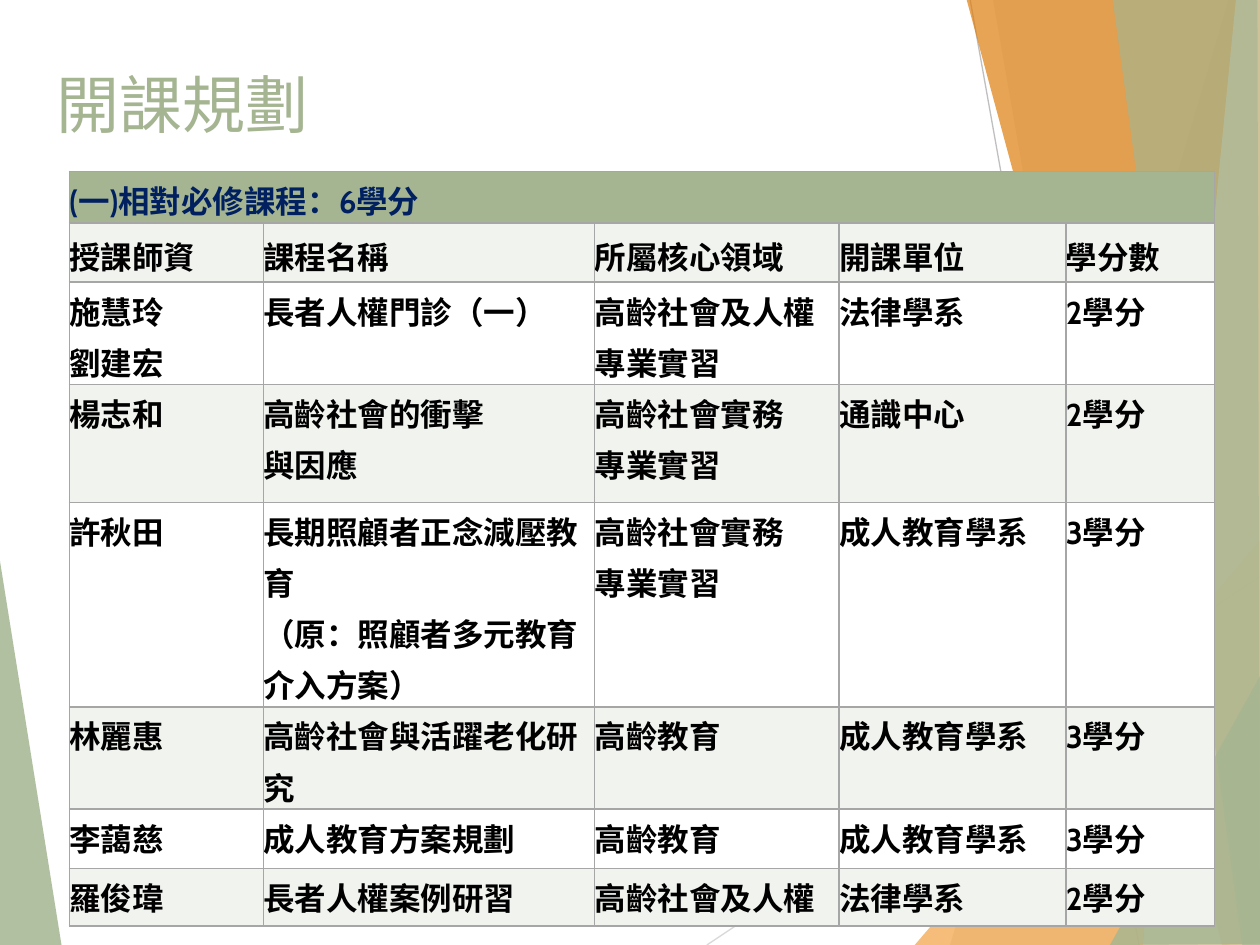
from lxml import etree
from pptx import Presentation
from pptx.dml.color import RGBColor
from pptx.enum import shapes, text
from pptx.oxml import ns
from pptx.util import Inches, Pt

FONT = "Cabin"
SAGE, PALE, WHITE = "A5B592", "F0F3EE", "FFFFFF"

TITLE = "開課規劃"
HEADING = "(一)相對必修課程：6學分"
COLUMNS = ["授課師資", "課程名稱", "所屬核心領域", "開課單位", "學分數"]
COURSES = [
    ("施慧玲\n劉建宏", "長者人權門診（一）", "高齡社會及人權\n專業實習", "法律學系", "2學分"),
    ("楊志和", "高齡社會的衝擊\n與因應", "高齡社會實務\n專業實習", "通識中心", "2學分"),
    ("許秋田", "長期照顧者正念減壓教育\n（原：照顧者多元教育\n介入方案）",
     "高齡社會實務\n專業實習", "成人教育學系", "3學分"),
    ("林麗惠", "高齡社會與活躍老化研究", "高齡教育", "成人教育學系", "3學分"),
    ("李藹慈", "成人教育方案規劃", "高齡教育", "成人教育學系", "3學分"),
    ("羅俊瑋", "長者人權案例研習", "高齡社會及人權", "法律學系", "2學分"),
]
COLUMN_WIDTHS = [1.54, 2.63, 1.94, 1.8, 1.18]
ROW_HEIGHTS = [0.41, 0.47, 0.81, 0.94, 1.28, 0.63, 0.47, 0.46]

LEFT_FACET = ([(-0.01, 4.39), (0.49, 7.51), (-0.01, 7.5)], SAGE, 85)
RAYS = [((5.61, 7.5), (10.01, 4.57), "D9D9D9"), ((7.7, 0), (9.04, 7.5), "BFBFBF")]
RIGHT_FACETS = [
    ([(9.75, 0), (7.54, 7.5), (10.02, 7.51), (10.01, 0.01)], SAGE, 30),
    ([(7.88, -0.01), (9.19, 7.5), (10.01, 7.5), (10.01, -0.01)], SAGE, 20),
    ([(7.26, 7.5), (10, 4.29), (10.01, 7.5)], "F3A447", 72),
    ([(7.67, -0.01), (9.7, 7.5), (10.01, 7.49), (10.01, -0.01)], "DD7E0E", 70),
    ([(9.81, -0.01), (9.07, 7.5), (10.01, 7.5), (10, -0.01)], "C9D3BE", 70),
    ([(8.83, -0.01), (9.86, 7.5), (10, 7.5), (9.98, -0.01)], SAGE, 65),
    ([(8.81, 7.5), (10.01, 5.35), (10.01, 7.49)], SAGE, 80),
]


def paint(fill, color):
    fill.solid()
    fill.fore_color.rgb = RGBColor.from_string(color)


def add_facet(slide, points, color, opacity):
    corners = [(Inches(x), Inches(y)) for x, y in points]
    builder = slide.shapes.build_freeform(*corners[0])
    builder.add_line_segments(corners[1:], close=True)
    facet = builder.convert_to_shape()
    facet.shadow.inherit = False
    facet.line.fill.background()
    paint(facet.fill, color)
    tint = facet.fill._xPr.find(".//" + ns.qn("a:srgbClr"))
    etree.SubElement(tint, ns.qn("a:alpha"), val=str(opacity * 1000))


def add_ray(slide, start, end, color):
    ray = slide.shapes.add_connector(
        shapes.MSO_CONNECTOR.STRAIGHT, *map(Inches, start + end))
    ray.line.width = Pt(0.75)
    paint(ray.line.fill, color)
    etree.SubElement(ray._element.spPr, ns.qn("a:effectLst"))


def write(paragraph, words, size, color, bold):
    run = paragraph.add_run()
    run.text = words
    run.font.name = FONT
    run.font.size = Pt(size)
    run.font.bold = bold
    paint(run.font.fill, color)


def add_borders(cell):
    properties = cell._tc.get_or_add_tcPr()
    for position, side in enumerate(("a:lnL", "a:lnR", "a:lnT", "a:lnB")):
        border = etree.Element(ns.qn(side), w=str(Pt(1)))
        solid = etree.SubElement(border, ns.qn("a:solidFill"))
        etree.SubElement(solid, ns.qn("a:srgbClr"), val="A6A6A6")
        properties.insert(position, border)


def fill_cell(cell, words, background, color, anchor):
    cell.margin_left = cell.margin_right = cell.margin_top = cell.margin_bottom = 0
    cell.vertical_anchor = anchor
    paint(cell.fill, background)
    add_borders(cell)
    frame = cell.text_frame
    for number, line in enumerate(words.split("\n") if words else []):
        paragraph = frame.add_paragraph() if number else frame.paragraphs[0]
        paragraph.line_spacing = 1.12
        write(paragraph, line, 18, color, True)


def add_title(slide):
    title = slide.shapes.title
    title.left, title.top, title.width, title.height = map(Inches, (0.35, 0.36, 9.5, 0.92))
    frame = title.text_frame
    frame.vertical_anchor = text.MSO_ANCHOR.MIDDLE
    frame.paragraphs[0].alignment = text.PP_ALIGN.LEFT
    write(frame.paragraphs[0], TITLE, 36, SAGE, False)
    slide.shapes._spTree.append(title._element)


def add_courses(slide):
    rows = [(HEADING, "", "", "", ""), COLUMNS] + COURSES
    table = slide.shapes.add_table(
        len(rows), len(COLUMNS), Inches(0.55), Inches(1.36),
        Inches(sum(COLUMN_WIDTHS)), Inches(sum(ROW_HEIGHTS))).table
    for column, width in zip(table.columns, COLUMN_WIDTHS):
        column.width = Inches(width)
    for r, (entries, height) in enumerate(zip(rows, ROW_HEIGHTS)):
        table.rows[r].height = Inches(height)
        background = SAGE if r == 0 else PALE if r % 2 else WHITE
        color = "002060" if r == 0 else "000000"
        anchor = text.MSO_ANCHOR.MIDDLE if r < 2 else text.MSO_ANCHOR.TOP
        for c, words in enumerate(entries):
            fill_cell(table.cell(r, c), words, background, color, anchor)
    table.cell(0, 0).merge(table.cell(0, len(COLUMNS) - 1))


def main():
    deck = Presentation()
    deck.slide_width, deck.slide_height = Inches(10), Inches(7.5)
    slide = deck.slides.add_slide(deck.slide_layouts.get_by_name("Title Only"))
    add_facet(slide, *LEFT_FACET)
    for ray in RAYS:
        add_ray(slide, *ray)
    for facet in RIGHT_FACETS:
        add_facet(slide, *facet)
    add_title(slide)
    add_courses(slide)
    deck.save("out.pptx")


if __name__ == "__main__":
    main()
